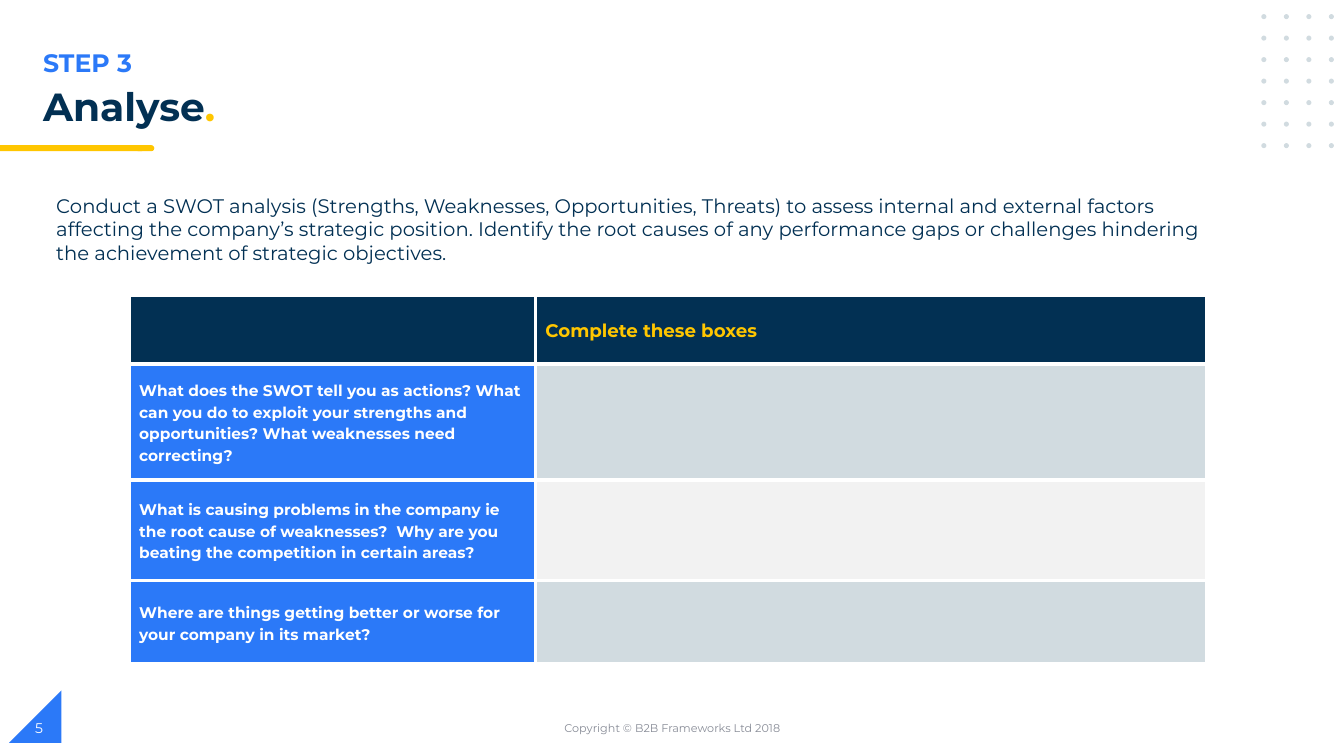
from lxml.etree import SubElement
from pptx import Presentation
from pptx.dml.color import RGBColor
from pptx.enum.shapes import MSO_SHAPE as Shape
from pptx.enum.text import MSO_ANCHOR as Anchor, PP_ALIGN as Align
from pptx.oxml.ns import qn
from pptx.util import Pt

PX = 9144
FONT = "Montserrat"
NAVY = RGBColor(0x02, 0x30, 0x53)
BLUE = RGBColor(0x2B, 0x79, 0xF8)
YELLOW = RGBColor(0xFF, 0xC6, 0x00)
MIST = RGBColor(0xD1, 0xDB, 0xE0)
PALE = RGBColor(0xF2, 0xF2, 0xF2)
GREY = RGBColor(0x88, 0x8C, 0x97)
WHITE = RGBColor(0xFF, 0xFF, 0xFF)

INTRO = (
    "Conduct a SWOT analysis (Strengths, Weaknesses, Opportunities, Threats) "
    "to assess internal and external factors affecting the company’s strategic "
    "position. Identify the root causes of any performance gaps or challenges "
    "hindering the achievement of strategic objectives."
)
QUESTIONS = [
    ("What does the SWOT tell you as actions? What can you do to exploit your "
     "strengths and opportunities? What weaknesses need correcting?", 115, MIST),
    ("What is causing problems in the company ie the root cause of weaknesses?  "
     "Why are you beating the competition in certain areas?", 100, PALE),
    ("Where are things getting better or worse for your company in its market?",
     83, MIST),
]


def emu(*lengths):
    return [round(length * PX) for length in lengths]


def add_run(p, text, size, color, bold=False):
    r = p.add_run()
    r.text = text
    r.font.name = FONT
    r.font.size = Pt(size)
    r.font.bold = bold
    r.font.color.rgb = color


def add_text(s, box, runs, anchor=Anchor.TOP, align=Align.LEFT, spacing=None):
    tf = s.shapes.add_textbox(*emu(*box)).text_frame
    tf.word_wrap = True
    tf.vertical_anchor = anchor
    p = tf.paragraphs[0]
    p.alignment = align
    p.line_spacing = spacing
    for run in runs:
        add_run(p, *run)


def add_solid(s, kind, box, color):
    sp = s.shapes.add_shape(kind, *emu(*box))
    sp.shadow.inherit = False
    sp.fill.solid()
    sp.fill.fore_color.rgb = color
    sp.line.fill.background()
    return sp


def add_heading(s, x, y, w):
    add_text(s, (x, y, 669, 40), [("STEP 3", 18, BLUE, True)])
    add_text(s, (x, y + 40, w, 56),
             [("Analyse", 28, NAVY, True), (".", 28, YELLOW, True)], spacing=0.9)
    add_solid(s, Shape.FLOWCHART_TERMINATOR, (x + 101, y + 102, 19, 6), YELLOW)
    add_solid(s, Shape.RECTANGLE, (0, y + 102, x + 108, 6), YELLOW)


def add_dots(s, x, y, w, h, cols=4, rows=7, size=5):
    for row in range(rows):
        for col in range(cols):
            left = x + col * (w - size) / (cols - 1)
            top = y + row * (h - size) / (rows - 1)
            add_solid(s, Shape.OVAL, (left, top, size, size), MIST)


def style_cell(cell, fill, text="", size=11, color=WHITE):
    cell.fill.solid()
    cell.fill.fore_color.rgb = fill
    cell.vertical_anchor = Anchor.MIDDLE
    cell.margin_left, cell.margin_right = emu(10, 10)
    cell.margin_top = cell.margin_bottom = 0
    if text:
        p = cell.text_frame.paragraphs[0]
        p.line_spacing = 1.15
        add_run(p, text, size, color, True)
    tc_pr = cell._tc.get_or_add_tcPr()
    for i, side in enumerate(("lnL", "lnR", "lnT", "lnB")):
        ln = tc_pr.makeelement(qn("a:" + side), {"w": str(Pt(3))})
        solid = SubElement(ln, qn("a:solidFill"))
        SubElement(solid, qn("a:srgbClr"), val=str(WHITE))
        tc_pr.insert(i, ln)


def add_worksheet(s, x, y, widths, header_height):
    heights = [header_height] + [height for _, height, _ in QUESTIONS]
    table = s.shapes.add_table(
        len(heights), len(widths), *emu(x, y, sum(widths), sum(heights))).table
    for column, width in zip(table.columns, emu(*widths)):
        column.width = width
    for row, height in zip(table.rows, emu(*heights)):
        row.height = height
    style_cell(table.cell(0, 0), NAVY)
    style_cell(table.cell(0, 1), NAVY, "Complete these boxes", 13, YELLOW)
    for i, (question, _, answer_fill) in enumerate(QUESTIONS, 1):
        style_cell(table.cell(i, 0), BLUE, question)
        style_cell(table.cell(i, 1), answer_fill)


def add_footer(s, x, y):
    corner = add_solid(s, Shape.RIGHT_TRIANGLE, (x, y, 52, 52), BLUE)
    corner.element.spPr.xfrm.set("flipH", "1")
    add_text(s, (x + 16, y + 17, 300, 40), [("5", 10, WHITE)], Anchor.MIDDLE)
    add_text(s, (x + 433, y + 17, 450, 40),
             [("Copyright © B2B Frameworks Ltd 2018", 8, GREY)],
             Anchor.MIDDLE, Align.CENTER)


def main():
    prs = Presentation()
    prs.slide_width, prs.slide_height = emu(1333, 750)
    s = prs.slides.add_slide(prs.slide_layouts[6])
    add_heading(s, 33, 42, 1159)
    add_dots(s, 1251, 14, 72, 133)
    add_text(s, (46, 187, 1183, 81), [(INTRO, 14, NAVY)])
    add_worksheet(s, 128, 293, (403, 666), 68)
    add_footer(s, 9, 685)
    prs.save("out.pptx")


if __name__ == "__main__":
    main()
